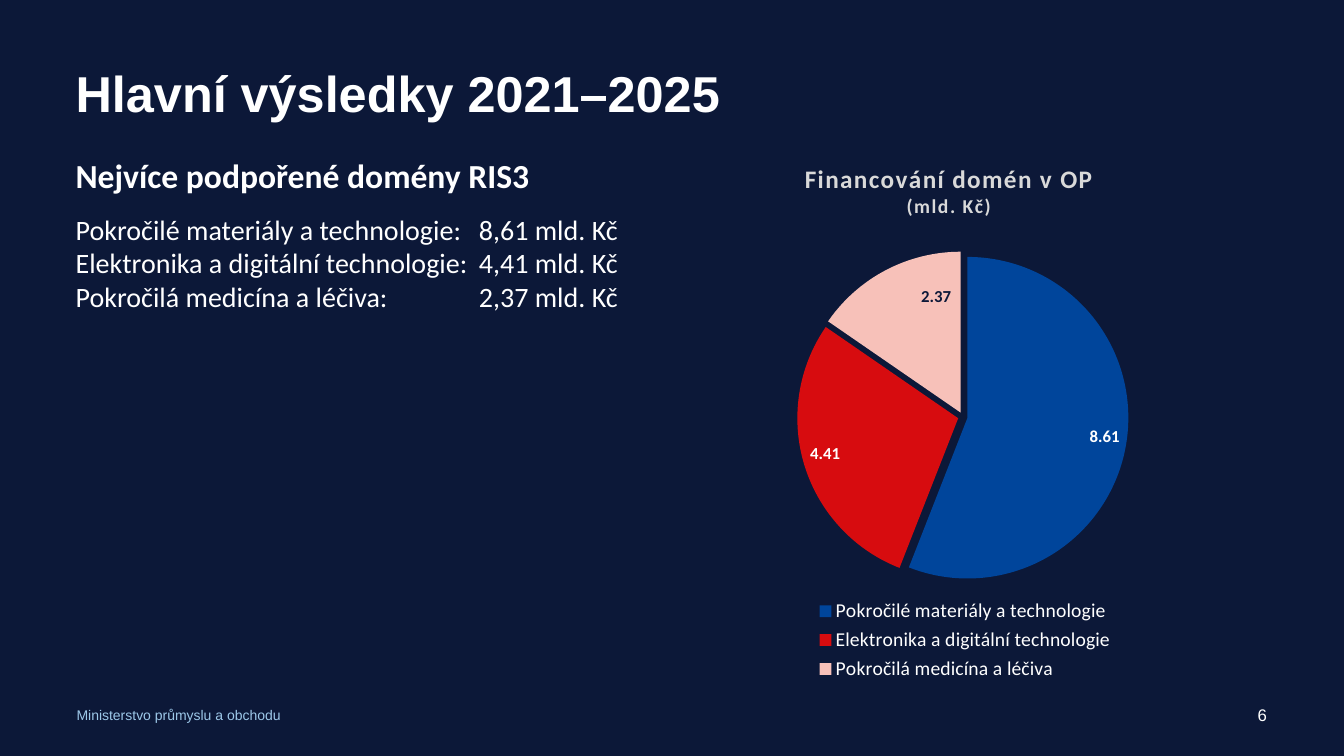
"""Build the slide on the best funded RIS3 domains with a pie chart of their financing."""
from dataclasses import dataclass, field
from typing import Any

from lxml.etree import SubElement
from pptx import Presentation
from pptx.chart.chart import Chart
from pptx.chart.data import CategoryChartData as ChartData
from pptx.dml.color import RGBColor
from pptx.enum.chart import XL_CHART_TYPE as ChartType
from pptx.enum.chart import XL_LABEL_POSITION as LabelPosition
from pptx.enum.chart import XL_LEGEND_POSITION as LegendPosition
from pptx.enum.text import MSO_ANCHOR as Anchor
from pptx.enum.text import PP_ALIGN as Align
from pptx.oxml import parse_xml
from pptx.oxml.ns import nsdecls, qn
from pptx.slide import Slide
from pptx.util import Emu, Inches, Pt

WIDTH, HEIGHT = Inches(13.33), Inches(7.5)
COLUMNS, ROWS = 160, 90

COLORS: dict[str, str] = {
    "night": "0C1838",
    "white": "FFFFFF",
    "sky": "9DC8E9",
    "silver": "D9D9D9",
    "blue": "00459B",
    "red": "D70C0F",
    "pink": "F7C1B9",
}


@dataclass(frozen=True)
class Area:
    column: float
    row: float
    columns: float
    rows: float

    def lengths(self) -> tuple[Emu, ...]:
        across, down = WIDTH / COLUMNS, HEIGHT / ROWS
        return (Emu(round(self.column * across)), Emu(round(self.row * down)),
                Emu(round(self.columns * across)), Emu(round(self.rows * down)))


@dataclass(frozen=True)
class Style:
    size: float
    name: str = "Calibri"
    color: str = "white"
    bold: bool = False


@dataclass(frozen=True)
class Line:
    text: str
    style: Style
    format: dict[str, Any] = field(default_factory=dict)
    tab: float = 0


@dataclass(frozen=True)
class TextBlock:
    area: Area
    lines: list[Line]
    anchor: Anchor = Anchor.TOP


@dataclass(frozen=True)
class Domain:
    name: str
    billions: float
    color: str

    def line(self) -> Line:
        amount = f"{self.billions:.2f}".replace(".", ",")
        return Line(f"{self.name}:\t{amount} mld. Kč", Style(20), tab=4)


DOMAINS = [
    Domain("Pokročilé materiály a technologie", 8.61, "blue"),
    Domain("Elektronika a digitální technologie", 4.41, "red"),
    Domain("Pokročilá medicína a léčiva", 2.37, "pink"),
]

BLOCKS = [
    TextBlock(Area(9.12, 82.68, 51.84, 4.8),
              [Line("Ministerstvo průmyslu a obchodu", Style(10, "Arial", "sky"))],
              Anchor.MIDDLE),
    TextBlock(Area(9, 8.16, 130, 7.92),
              [Line("Hlavní výsledky 2021–2025", Style(36, "Arial", bold=True),
                    {"line_spacing": 0.9})]),
    TextBlock(Area(9, 18.48, 75.72, 63.36),
              [Line("Nejvíce podpořené domény RIS3", Style(24, bold=True),
                    {"space_after": Pt(12)}),
               *(domain.line() for domain in DOMAINS)]),
    TextBlock(Area(114.84, 82.68, 36, 4.8),
              [Line("6", Style(12, "Arial"), {"alignment": Align.RIGHT})],
              Anchor.MIDDLE),
]

CHART_AREA = Area(87.12, 16.92, 55.56, 68.16)
CHART_TITLE = [
    Line("Financování domén v OP", Style(18, color="silver", bold=True)),
    Line("(mld. Kč)", Style(14, color="silver", bold=True)),
]


def apply(target: Any, values: dict[str, Any]) -> None:
    for name, value in values.items():
        setattr(target, name, value)


def set_font(font: Any, style: Style) -> None:
    apply(font, {"size": Pt(style.size), "name": style.name, "bold": style.bold})
    paint(font.fill, style.color)


def paint(fill: Any, color: str) -> None:
    fill.solid()
    fill.fore_color.rgb = RGBColor.from_string(COLORS[color])


def write_lines(frame: Any, lines: list[Line], spacing: int = 0) -> None:
    for index, line in enumerate(lines):
        para = frame.add_paragraph() if index else frame.paragraphs[0]
        if line.tab:
            tabs = SubElement(para._p.get_or_add_pPr(), qn("a:tabLst"))
            SubElement(tabs, qn("a:tab"), pos=str(Inches(line.tab)), algn="l")
        apply(para, line.format)
        span = para.add_run()
        span.text = line.text
        set_font(span.font, line.style)
        if spacing:
            span.font._element.set("spc", str(spacing))


def add_text(page: Slide, block: TextBlock) -> None:
    frame = page.shapes.add_textbox(*block.area.lengths()).text_frame
    apply(frame, {"word_wrap": True, "vertical_anchor": block.anchor,
                  "margin_left": 0, "margin_top": 0,
                  "margin_right": 0, "margin_bottom": 0})
    write_lines(frame, block.lines)


def set_layout(parent: Any, before: str, values: dict[str, Any]) -> None:
    for old in parent.findall(qn("c:layout")):
        parent.remove(old)
    items = "".join(f'<c:{name} val="{value}"/>' for name, value in values.items())
    layout = parse_xml(f'<c:layout {nsdecls("c")}><c:manualLayout>{items}'
                       '</c:manualLayout></c:layout>')
    if before:
        parent.find(qn(before)).addnext(layout)
    else:
        parent.insert(0, layout)


def style_series(chart: Chart) -> None:
    series = chart.plots[0].series[0]
    for index, domain in enumerate(DOMAINS):
        paint(series.points[index].format.fill, domain.color)
    series._element.find(qn("c:tx")).addnext(
        parse_xml(f'<c:explosion {nsdecls("c")} val="3"/>'))
    labels = series.data_labels
    apply(labels, {"show_value": True, "position": LabelPosition.INSIDE_END})
    set_font(labels.font, Style(12, bold=True))
    last = series.points[len(DOMAINS) - 1].data_label
    set_font(last.font, Style(12, color="night", bold=True))
    last.position = LabelPosition.INSIDE_END
    set_layout(last.font._element.getparent().getparent().getparent().getparent(),
               "c:idx", {"x": 0.07, "y": 0.02})


def add_pie(page: Slide) -> None:
    data = ChartData()
    data.categories = [domain.name for domain in DOMAINS]
    data.add_series("Series 1", [domain.billions for domain in DOMAINS])
    chart = page.shapes.add_chart(ChartType.PIE, *CHART_AREA.lengths(), data).chart
    apply(chart, {"has_title": True, "has_legend": True})
    set_font(chart.font, Style(10))
    write_lines(chart.chart_title.text_frame, CHART_TITLE, spacing=100)
    apply(chart.legend, {"position": LegendPosition.TOP, "include_in_layout": False})
    set_font(chart.legend.font, Style(14))
    edge = {"xMode": "edge", "yMode": "edge"}
    set_layout(chart.chart_title._element, "c:tx", {**edge, "x": 0.15, "y": 0.03})
    set_layout(chart.legend._element, "c:legendPos",
               {**edge, "x": 0.17, "y": 0.79, "w": 0.66, "h": 0.16})
    set_layout(chart._chartSpace.chart.plotArea, "",
               {"layoutTarget": "inner", **edge,
                "x": 0.14, "y": 0.17, "w": 0.71, "h": 0.62})
    style_series(chart)


def main() -> None:
    deck = Presentation()
    apply(deck, {"slide_width": WIDTH, "slide_height": HEIGHT})
    page = deck.slides.add_slide(deck.slide_layouts[6])
    paint(page.background.fill, "night")
    for block in BLOCKS:
        add_text(page, block)
    add_pie(page)
    deck.save("out.pptx")


if __name__ == "__main__":
    main()
